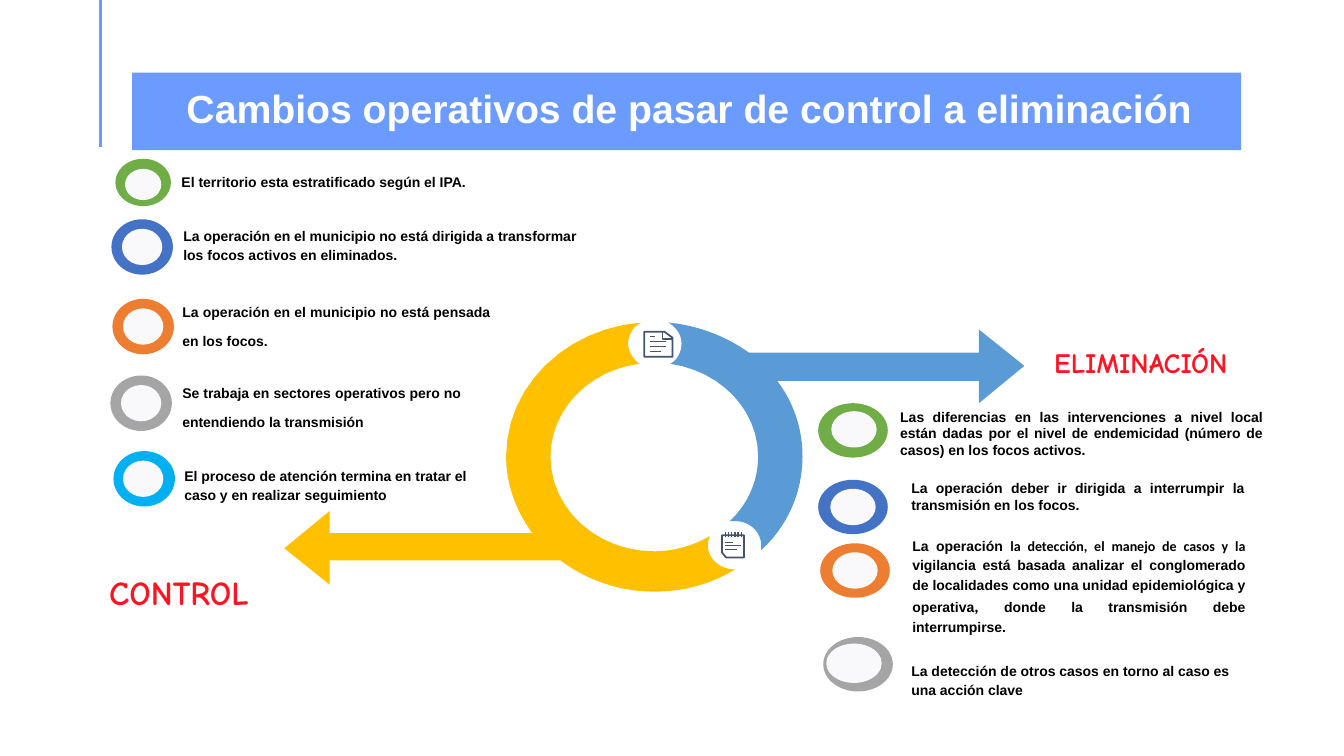
from lxml import etree
from pptx import Presentation
from pptx.dml.color import RGBColor
from pptx.enum.shapes import MSO_CONNECTOR, MSO_SHAPE
from pptx.enum.text import MSO_ANCHOR, PP_ALIGN
from pptx.oxml.ns import qn
from pptx.util import Inches, Pt

OVAL, RECT = MSO_SHAPE.OVAL, MSO_SHAPE.RECTANGLE
STRAIGHT = MSO_CONNECTOR.STRAIGHT
TOP, MIDDLE, BOTTOM = MSO_ANCHOR.TOP, MSO_ANCHOR.MIDDLE, MSO_ANCHOR.BOTTOM
LEFT, CENTER, JUSTIFY = PP_ALIGN.LEFT, PP_ALIGN.CENTER, PP_ALIGN.JUSTIFY

COLORS = {
    "banner": "6B9BFF", "white": "FFFFFF", "black": "000000", "red": "FF1422",
    "green": "70AD47", "blue": "4472C4", "orange": "ED7D31", "gray": "A5A5A5",
    "cyan": "00B0F0", "pale": "F9F9FC", "sky": "5B9BD5", "gold": "FFC000",
    "slate": "44546A",
}
LEFT_SIZE, LEFT_HOLE = (0.61, 0.55), (0.4, 0.36)
RIGHT_SIZE, RIGHT_HOLE = (0.69, 0.54), (0.45, 0.36)
RINGS = [
    ("green", (1.42, 1.81), (0.55, 0.47), (1.42, 1.83), (0.36, 0.31)),
    ("blue", (1.41, 2.45), LEFT_SIZE, (1.41, 2.45), LEFT_HOLE),
    ("orange", (1.42, 3.24), LEFT_SIZE, (1.42, 3.24), LEFT_HOLE),
    ("gray", (1.4, 4), LEFT_SIZE, (1.4, 4), LEFT_HOLE),
    ("cyan", (1.43, 4.75), LEFT_SIZE, (1.42, 4.75), LEFT_HOLE),
    ("green", (8.46, 4.27), RIGHT_SIZE, (8.47, 4.26), RIGHT_HOLE),
    ("blue", (8.46, 5.03), RIGHT_SIZE, (8.46, 5.03), RIGHT_HOLE),
    ("orange", (8.48, 5.66), RIGHT_SIZE, (8.48, 5.66), RIGHT_HOLE),
    ("gray", (8.51, 6.59), RIGHT_SIZE, (8.47, 6.58), (0.55, 0.39)),
]
ELIMINATION_ARROW = [
    (10.16, 3.63), (9.71, 3.27), (9.71, 3.5), (7.43, 3.5),
    (7.21, 3.34, 6.93, 3.23, 6.63, 3.2), (6.71, 3.25, 6.76, 3.32, 6.76, 3.41),
    (6.76, 3.49, 6.72, 3.57, 6.65, 3.61), (7.14, 3.68, 7.52, 4.06, 7.52, 4.53),
    (7.52, 4.78, 7.41, 5.01, 7.24, 5.17), (7.26, 5.17, 7.27, 5.17, 7.29, 5.17),
    (7.44, 5.17, 7.55, 5.28, 7.55, 5.41), (7.55, 5.46),
    (7.81, 5.22, 7.96, 4.89, 7.96, 4.53), (7.96, 4.25, 7.87, 3.99, 7.71, 3.78),
    (9.71, 3.78), (9.71, 4),
]
CONTROL_ARROW = [
    (7.29, 5.65), (7.14, 5.65, 7.02, 5.54, 7.02, 5.41),
    (7.02, 5.38, 7.03, 5.35, 7.04, 5.32), (6.88, 5.41, 6.69, 5.47, 6.49, 5.47),
    (5.92, 5.47, 5.46, 5.05, 5.46, 4.53), (5.46, 4.06, 5.85, 3.67, 6.34, 3.61),
    (6.28, 3.56, 6.23, 3.49, 6.23, 3.41), (6.23, 3.32, 6.28, 3.24, 6.36, 3.2),
    (5.61, 3.26, 5.02, 3.83, 5.02, 4.53), (5.02, 4.81, 5.12, 5.07, 5.28, 5.29),
    (3.27, 5.29), (3.27, 5.07), (2.82, 5.44), (3.27, 5.8), (3.27, 5.56),
    (5.56, 5.56), (5.81, 5.75, 6.14, 5.87, 6.49, 5.87),
    (6.79, 5.87, 7.06, 5.79, 7.29, 5.65),
]
DOCUMENT = [(6.39, 3.29), (6.59, 3.29), (6.67, 3.35), (6.67, 3.54), (6.39, 3.54)]
FOLD = [(6.57, 3.29), (6.57, 3.36), (6.67, 3.36)]
NOTEPAD = [(7.16, 5.31), (7.38, 5.31), (7.38, 5.53), (7.2, 5.53), (7.16, 5.48)]
ICON_LINES = [
    (6.45, 3.34, 6.5, 3.34), (6.45, 3.39, 6.61, 3.39), (6.45, 3.44, 6.61, 3.44),
    (6.45, 3.49, 6.56, 3.49), (7.19, 5.38, 7.27, 5.38), (7.19, 5.41, 7.35, 5.41),
    (7.19, 5.45, 7.31, 5.45),
] + [(7.2 + i * 0.03, 5.28, 7.2 + i * 0.03, 5.33) for i in range(6)]

SMALL = (0.05, 0.03, 0.05, 0.05)
NOTES = [
    ("El territorio esta estratificado según el IPA.", (1.75, 1.64, 4.32, 0.32),
     dict(anchor=MIDDLE, align=JUSTIFY, spacing=1.15, insets=SMALL)),
    ("La operación en el municipio no está dirigida a transformar los focos "
     "activos en eliminados.", (1.72, 2.18, 4.32, 0.52), dict(spacing=1.15)),
    ("La operación en el municipio no está pensada en los focos.",
     (1.76, 2.84, 3.15, 0.7),
     dict(anchor=MIDDLE, align=JUSTIFY, spacing=Pt(20.5), insets=SMALL)),
    ("Se trabaja en sectores operativos pero no entendiendo la transmisión",
     (1.71, 3.65, 2.96, 0.71), dict(align=JUSTIFY, spacing=Pt(20.5))),
    ("El proceso de atención termina en tratar el caso y en realizar seguimiento",
     (1.73, 4.56, 3.2, 0.52), dict(spacing=1.15)),
    ("Las diferencias en las intervenciones a nivel local están dadas por el nivel "
     "de endemicidad (número de casos) en los focos activos.",
     (8.83, 4, 3.79, 0.64), dict(align=JUSTIFY)),
    ("La operación deber ir dirigida a interrumpir la transmisión en los focos.",
     (8.94, 4.71, 3.5, 0.49), dict(align=JUSTIFY)),
    ([("La operación ", {}),
      ("la detección, el manejo de casos y la ", dict(font="Calibri")),
      ("vigilancia está basada analizar el conglomerado de localidades como una "
       "unidad epidemiológica y operativa", {}),
      (", ", dict(font="Calibri", size=12)),
      ("donde la transmisión debe interrumpirse.", {})],
     (8.95, 5.26, 3.5, 1.15), dict(align=JUSTIFY, spacing=1.15)),
    ("La detección de otros casos en torno al caso es una acción clave",
     (8.94, 6.5, 3.42, 0.5), dict(spacing=1.15)),
]


def rgb(name):
    """Return the named colour."""
    return RGBColor.from_string(COLORS[name])


def paint(sp, fill=None, line=None, width=1.25):
    """Set fill and line of a shape and remove its shadow."""
    sp.shadow.inherit = False
    for part, color in ((sp.fill, fill), (sp.line.fill, line)):
        if color:
            part.solid()
            part.fore_color.rgb = rgb(color)
        else:
            part.background()
    if line:
        sp.line.width = Pt(width)


def add_preset(s, kind, box, fill):
    """Add a filled preset shape."""
    paint(s.shapes.add_shape(kind, *map(Inches, box)), fill)


def add_ring(s, color, center, size, hole_center, hole_size):
    """Add a coloured oval with a pale oval inside."""
    for (x, y), (w, h), fill in ((center, size, color), (hole_center, hole_size, "pale")):
        add_preset(s, OVAL, (x - w / 2, y - h / 2, w, h), fill)


def flatten(path, steps=12):
    """Turn lines and cubic curves into a list of points."""
    points = [path[0]]
    for seg in path[1:]:
        if len(seg) == 2:
            points.append(seg)
            continue
        ends = [points[-1], seg[:2], seg[2:4], seg[4:]]
        for i in range(1, steps + 1):
            t = i / steps
            weights = ((1 - t) ** 3, 3 * t * (1 - t) ** 2, 3 * t * t * (1 - t), t ** 3)
            points.append(tuple(sum(w * e[k] for w, e in zip(weights, ends)) for k in (0, 1)))
    return points


def add_outline(s, path, close=True, **style):
    """Add a freeform along a path of lines and curves."""
    points = [(Inches(x), Inches(y)) for x, y in flatten(path)]
    builder = s.shapes.build_freeform(*points[0])
    builder.add_line_segments(points[1:], close=close)
    paint(builder.convert_to_shape(), **style)


def add_line(s, ends, color, width):
    """Add a straight line without shadow."""
    c = s.shapes.add_connector(STRAIGHT, *map(Inches, ends))
    c.line.color.rgb = rgb(color)
    c.line.width = Pt(width)
    etree.SubElement(c._element.spPr, qn("a:effectLst"))


def add_text(s, text, box, size=10, font="Arial", color="black", align=LEFT,
             anchor=TOP, spacing=None, insets=(0.1, 0.05, 0.1, 0.05)):
    """Add a bold text box from a string or a list of (text, format) runs."""
    tf = s.shapes.add_textbox(*map(Inches, box)).text_frame
    tf.word_wrap = True
    tf.vertical_anchor = anchor
    tf.margin_left, tf.margin_top, tf.margin_right, tf.margin_bottom = map(Inches, insets)
    p = tf.paragraphs[0]
    p.alignment = align
    p.line_spacing = spacing
    for words, fmt in [(text, {})] if isinstance(text, str) else text:
        r = p.add_run()
        r.text = words
        r.font.name = fmt.get("font", font)
        r.font.size = Pt(fmt.get("size", size))
        r.font.bold = True
        r.font.color.rgb = rgb(color)


def main():
    """Build the slide and save it."""
    prs = Presentation()
    prs.slide_width, prs.slide_height = Inches(13.33), Inches(7.5)
    s = prs.slides.add_slide(prs.slide_layouts[6])
    add_preset(s, RECT, (1.31, 0.72, 11, 0.77), "banner")
    add_line(s, (1, 0, 1, 1.46), "banner", 2.25)
    add_outline(s, ELIMINATION_ARROW, fill="sky")
    add_outline(s, CONTROL_ARROW, fill="gold")
    for ring in RINGS:
        add_ring(s, *ring)
    add_outline(s, DOCUMENT, line="slate")
    add_outline(s, FOLD, close=False, line="slate")
    add_outline(s, NOTEPAD, line="slate")
    for ends in ICON_LINES:
        add_line(s, ends, "slate", 0.75)
    for text, box, style in NOTES:
        add_text(s, text, box, **style)
    label = dict(font="Comic Neue", color="red", align=CENTER, anchor=BOTTOM)
    add_text(s, "CONTROL", (0.74, 5.7, 2.07, 0.42), size=24, **label)
    add_text(s, "ELIMINACIÓN", (10.11, 3.44, 2.41, 0.37), size=20, **label)
    add_text(s, "Cambios operativos de pasar de control a eliminación",
             (1.65, 0.8, 10.37, 0.59), size=28, color="white", align=CENTER,
             anchor=MIDDLE, spacing=0.9)
    prs.save("out.pptx")


if __name__ == "__main__":
    main()
